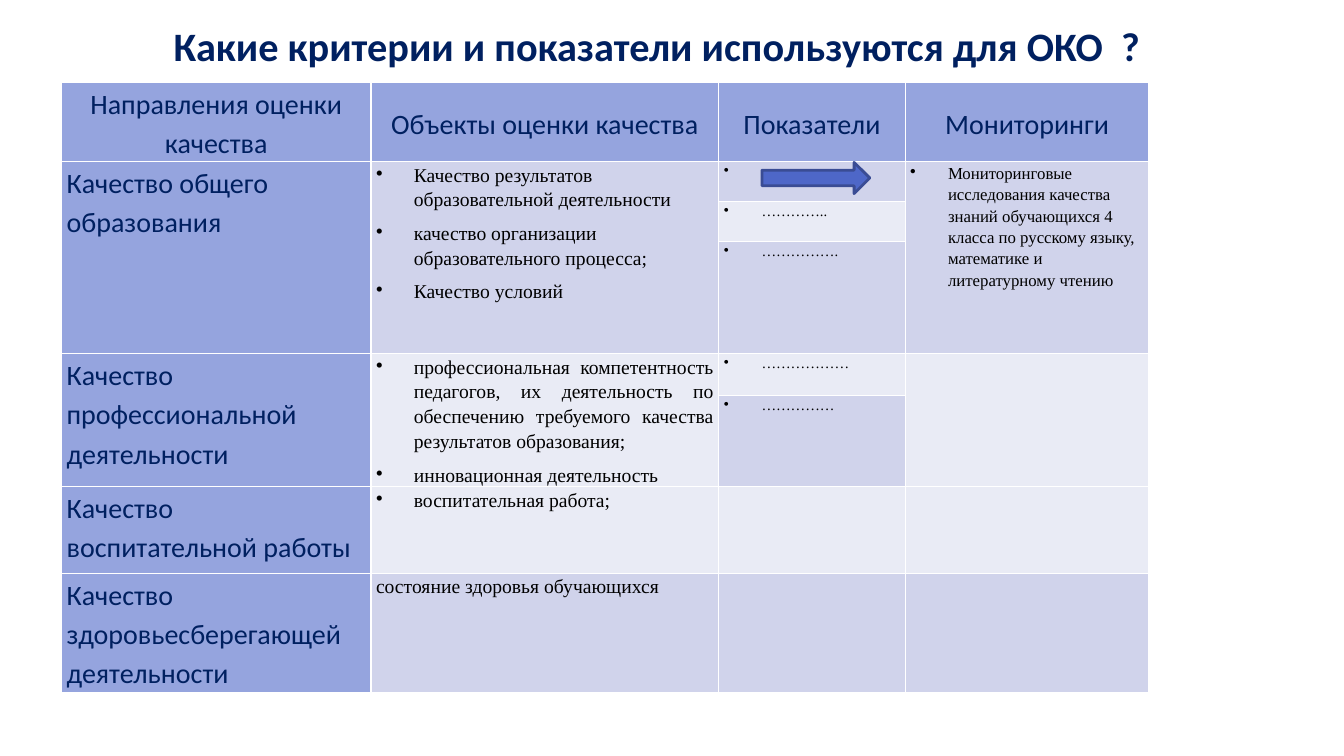
from lxml import etree
from pptx import Presentation
from pptx.dml.color import RGBColor
from pptx.enum.shapes import MSO_SHAPE
from pptx.enum.text import MSO_ANCHOR, PP_ALIGN
from pptx.oxml.ns import qn
from pptx.util import Pt

LEFT, CENTER, JUSTIFY = PP_ALIGN.LEFT, PP_ALIGN.CENTER, PP_ALIGN.JUSTIFY
TOP, MIDDLE = MSO_ANCHOR.TOP, MSO_ANCHOR.MIDDLE
RIGHT_ARROW = MSO_SHAPE.RIGHT_ARROW

NAVY = RGBColor(0x00, 0x20, 0x60)
BLACK = RGBColor(0x00, 0x00, 0x00)
PERIWINKLE = RGBColor(0x95, 0xA4, 0xDE)
LAVENDER = RGBColor(0xD0, 0xD3, 0xEB)
PALE = RGBColor(0xE9, 0xEB, 0xF5)
ARROW_FILL = RGBColor(0x4E, 0x67, 0xC8)
ARROW_LINE = RGBColor(0x3A, 0x4C, 0x94)

HEADERS = ["Направления оценки качества", "Объекты оценки качества",
           "Показатели", "Мониторинги"]
DIRECTIONS = [
    (1, "Качество общего образования", LEFT),
    (4, "Качество профессиональной деятельности", JUSTIFY),
    (6, "Качество воспитательной работы", JUSTIFY),
    (7, "Качество здоровьесберегающей деятельности", JUSTIFY),
]
OBJECTS = [
    (1, "Качество результатов образовательной деятельности\n"
        "качество организации образовательного процесса;\n"
        "Качество условий", LEFT, True),
    (4, "профессиональная компетентность педагогов, их деятельность по "
        "обеспечению требуемого качества результатов образования;\n"
        "инновационная деятельность", JUSTIFY, True),
    (6, "воспитательная работа;", JUSTIFY, True),
    (7, "состояние здоровья обучающихся", JUSTIFY, False),
]
INDICATORS = [
    (1, "……………..", LEFT),
    (2, "…………..", LEFT),
    (3, "…………….", LEFT),
    (4, "………………", JUSTIFY),
    (5, "……………", JUSTIFY),
]
MONITORING = ("Мониторинговые исследования качества знаний обучающихся 4 класса "
              "по русскому языку, математике и литературному чтению")

COLUMN_WIDTHS = [221, 248.4, 133.2, 174.2]
ROW_HEIGHTS = [55.5, 28.6, 28.6, 80, 30, 65, 62, 85]
ROW_FILLS = [PERIWINKLE, LAVENDER, PALE, LAVENDER, PALE, LAVENDER, PALE, LAVENDER]
MERGED_ROWS = [(1, 3), (4, 5)]
MERGED_COLUMNS = [0, 1, 3]


class SlideBuilder:
    heading_font = "Calibri"
    body_font = "Times New Roman"
    indent = 27

    def __init__(self, slide):
        self.slide = slide

    def style_runs(self, paragraph, font, size, color, bold=False):
        for run in paragraph.runs:
            run.font.name = font
            run.font.size = Pt(size)
            run.font.bold = bold
            run.font.color.rgb = color

    def title(self, text, left, top, width, height):
        shape = self.slide.shapes.add_textbox(Pt(left), Pt(top), Pt(width), Pt(height))
        frame = shape.text_frame
        frame.word_wrap = True
        frame.vertical_anchor = MIDDLE
        frame.text = text
        paragraph = frame.paragraphs[0]
        paragraph.alignment = CENTER
        self.style_runs(paragraph, self.heading_font, 28.8, NAVY, True)

    def arrow(self, left, top, width, height):
        shape = self.slide.shapes.add_shape(
            RIGHT_ARROW, Pt(left), Pt(top), Pt(width), Pt(height))
        shape.shadow.inherit = False
        shape.fill.solid()
        shape.fill.fore_color.rgb = ARROW_FILL
        shape.line.color.rgb = ARROW_LINE
        shape.line.width = Pt(2)

    def table(self, left, top):
        frame = self.slide.shapes.add_table(
            len(ROW_HEIGHTS), len(COLUMN_WIDTHS), Pt(left), Pt(top),
            Pt(sum(COLUMN_WIDTHS)), Pt(sum(ROW_HEIGHTS)))
        table = frame.table
        table.first_row = False
        table.horz_banding = False
        for column, width in zip(table.columns, COLUMN_WIDTHS):
            column.width = Pt(width)
        for row, height, color in zip(table.rows, ROW_HEIGHTS, ROW_FILLS):
            row.height = Pt(height)
            for index, cell in enumerate(row.cells):
                self.cell_frame(cell, PERIWINKLE if index == 0 else color)
        for first, last in MERGED_ROWS:
            for column in MERGED_COLUMNS:
                table.cell(first, column).merge(table.cell(last, column))
        return table

    def cell_frame(self, cell, color):
        cell.margin_left = cell.margin_right = Pt(3.6)
        cell.margin_top = cell.margin_bottom = Pt(0)
        properties = cell._tc.get_or_add_tcPr()
        for side in ("a:lnL", "a:lnR", "a:lnT", "a:lnB"):
            line = etree.SubElement(properties, qn(side), w=str(Pt(1)))
            solid = etree.SubElement(line, qn("a:solidFill"))
            etree.SubElement(solid, qn("a:srgbClr"), val="FFFFFF")
        cell.fill.solid()
        cell.fill.fore_color.rgb = color

    def cell_text(self, cell, text, font, size, color, align, bullet=False, anchor=TOP):
        cell.vertical_anchor = anchor
        cell.text_frame.text = text
        for index, paragraph in enumerate(cell.text_frame.paragraphs):
            paragraph.alignment = align
            paragraph.line_spacing = 1.15
            paragraph.space_before = Pt(6 if index else 0)
            if bullet:
                properties = paragraph._p.get_or_add_pPr()
                properties.set("marL", str(Pt(self.indent)))
                properties.set("indent", str(-Pt(self.indent)))
                etree.SubElement(properties, qn("a:buChar"), char="•")
            self.style_runs(paragraph, font, size, color)

    def heading(self, cell, text, align, anchor=TOP):
        self.cell_text(cell, text, self.heading_font, 20, NAVY, align, anchor=anchor)

    def body(self, cell, text, size, align, bullet=True):
        self.cell_text(cell, text, self.body_font, size, BLACK, align, bullet)


def main():
    presentation = Presentation()
    presentation.slide_width = Pt(960)
    presentation.slide_height = Pt(540)
    builder = SlideBuilder(presentation.slides.add_slide(presentation.slide_layouts[6]))

    table = builder.table(44, 59)
    for column, text in enumerate(HEADERS):
        cell = table.cell(0, column)
        cell.fill.fore_color.rgb = PERIWINKLE
        builder.heading(cell, text, CENTER, MIDDLE)
    for row, text, align in DIRECTIONS:
        builder.heading(table.cell(row, 0), text, align)
    for row, text, align, bullet in OBJECTS:
        builder.body(table.cell(row, 1), text, 14, align, bullet)
    for row, text, align in INDICATORS:
        builder.body(table.cell(row, 2), text, 10.5, align)
    builder.body(table.cell(1, 3), MONITORING, 12, LEFT)

    builder.arrow(544.3, 116, 77, 22.3)
    builder.title("Какие критерии и показатели используются для ОКО  ?",
                  102.2, 9.4, 734.4, 46)
    presentation.save("out.pptx")


if __name__ == "__main__":
    main()
